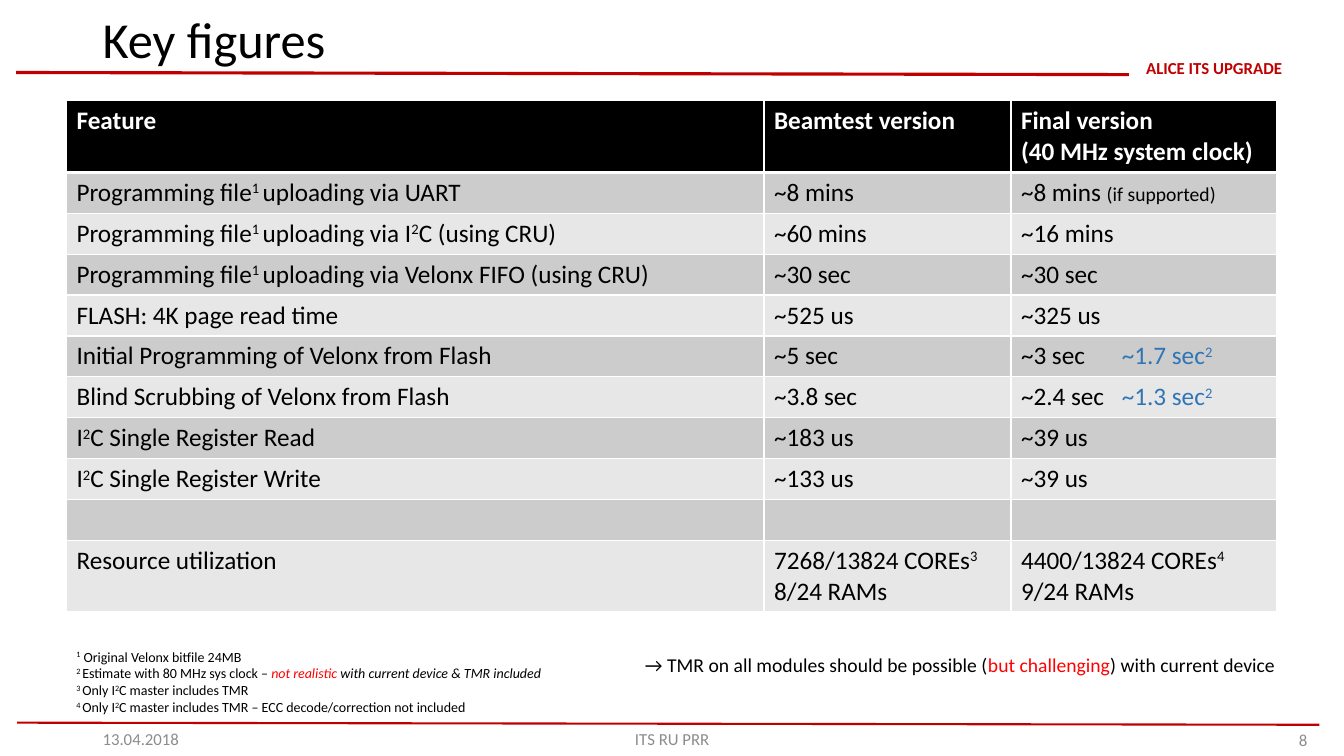
"""Build the key figures slide with its feature table and footnotes."""
from dataclasses import dataclass, field
from typing import Any, NamedTuple

from lxml.etree import SubElement
from pptx import Presentation
from pptx.dml.color import RGBColor
from pptx.enum.shapes import MSO_CONNECTOR as Connector
from pptx.enum.text import MSO_ANCHOR as Anchor, MSO_AUTO_SIZE as AutoSize, PP_ALIGN as Align
from pptx.oxml.ns import qn
from pptx.util import Pt

BLACK = RGBColor(0x00, 0x00, 0x00)
WHITE = RGBColor(0xFF, 0xFF, 0xFF)
DARK_RED = RGBColor(0xC0, 0x00, 0x00)
RED = RGBColor(0xFF, 0x00, 0x00)
BLUE = RGBColor(0x2E, 0x75, 0xB6)
FOOTER_GRAY = RGBColor(0x8C, 0x8C, 0x8C)
BAND_COLORS = (RGBColor(0xE7, 0xE7, 0xE7), RGBColor(0xCC, 0xCC, 0xCC))

COLUMN_WIDTHS = (498.2, 176.4, 190.1)
TALL_ROW, ROW = 50.4, 29.2
TABLE_LEFT, TABLE_TOP = 47.5, 72


class Piece(NamedTuple):
    text: str
    style: dict[str, Any] = {}


class Rule(NamedTuple):
    start: tuple[float, float]
    end: tuple[float, float]
    width: float


Line = str | list[Piece]


@dataclass
class TextBox:
    frame: tuple[float, float, float, float]
    lines: list[Line]
    size: float
    color: RGBColor = BLACK
    align: Align = Align.LEFT
    wrap: bool = True
    anchor: Anchor = Anchor.TOP
    bold: bool = False
    margins: dict[str, Any] = field(default_factory=dict)


RULES = (
    Rule((11.5, 51.8), (806.4, 53.3), 2.25),
    Rule((942.5, 517.7), (12.2, 516.2), 1.5),
)

NO_MARGINS = {f"margin_{side}": Pt(0) for side in ("left", "top", "right", "bottom")}
FOOTER = {"size": 12, "color": FOOTER_GRAY, "anchor": Anchor.MIDDLE}

TEXT_BOXES = (
    TextBox((815.8, 41.8, 103, 13.7), ["ALICE ITS UPGRADE"], 12, DARK_RED, Align.CENTER,
            anchor=Anchor.MIDDLE, bold=True, margins=NO_MARGINS),
    TextBox((66.2, 517.7, 216, 20.2), ["13.04.2018"], **FOOTER),
    TextBox((318.2, 517.7, 324, 20.2), ["ITS RU PRR"], align=Align.CENTER, **FOOTER),
    TextBox((831.6, 518.4, 109.4, 20.2), ["8"], align=Align.RIGHT, **FOOTER),
    TextBox((47.5, 459.4, 355, 55.4), [
        "^1^ Original Velonx bitfile 24MB",
        [Piece("^2 ^Estimate with 80 MHz sys clock – "),
         Piece("not realistic ", {"italic": True, "color": RED}),
         Piece("with current device & TMR included", {"italic": True})],
        "^3 ^Only I^2^C master includes TMR",
        "^4 ^Only I^2^C master includes TMR – ECC decode/correction not included",
    ], 10, wrap=False),
    TextBox((453.6, 463, 469.4, 24.5), [
        [Piece("→ TMR on all modules should be possible ("),
         Piece("but challenging", {"color": RED}),
         Piece(") with current device")],
    ], 14, wrap=False),
)

TABLE_ROWS: list[tuple[list[Line], list[Line], list[Line]]] = [
    (["Feature"], ["Beamtest version"], ["Final version", "(40 MHz system clock)"]),
    (["Programming file^1 ^uploading via UART"], ["~8 mins"],
     [[Piece("~8 mins "), Piece("(if supported)", {"size": Pt(14)})]]),
    (["Programming file^1 ^uploading via I^2^C (using CRU)"], ["~60 mins"], ["~16 mins"]),
    (["Programming file^1 ^uploading via Velonx FIFO (using CRU)"], ["~30 sec"], ["~30 sec"]),
    (["FLASH: 4K page read time"], ["~525 us"], ["~325 us"]),
    (["Initial Programming of Velonx from Flash"], ["~5 sec"],
     [[Piece("~3 sec\t"), Piece("~1.7 sec^2^", {"color": BLUE})]]),
    (["Blind Scrubbing of Velonx from Flash"], ["~3.8 sec"],
     [[Piece("~2.4 sec\t"), Piece("~1.3 sec^2^", {"color": BLUE})]]),
    (["I^2^C Single Register Read"], ["~183 us"], ["~39 us"]),
    (["I^2^C Single Register Write"], ["~133 us"], ["~39 us"]),
    ([], [], []),
    (["Resource utilization"], ["7268/13824 COREs^3^", "8/24 RAMs"],
     ["4400/13824 COREs^4^", "9/24 RAMs"]),
]


def apply(target: Any, values: dict[str, Any]) -> None:
    """Set each named attribute on the target."""
    for name, value in values.items():
        setattr(target, name, value)


def write_lines(text_frame: Any, lines: list[Line], style: dict[str, Any],
                align: Align = Align.LEFT) -> None:
    """Write one paragraph per line; text between carets is superscript."""
    for index, line in enumerate(lines):
        paragraph = text_frame.add_paragraph() if index else text_frame.paragraphs[0]
        paragraph.alignment = align
        for piece in [Piece(line)] if isinstance(line, str) else line:
            for part, text in enumerate(piece.text.split("^")):
                if not text:
                    continue
                run = paragraph.add_run()
                run.text = text
                values = {"name": "Calibri", **style, **piece.style}
                run.font.color.rgb = values.pop("color")
                apply(run.font, values)
                if part % 2:
                    run._r.get_or_add_rPr().set("baseline", "30000")


def add_rule(slide: Any, rule: Rule) -> None:
    """Draw one red rule."""
    connector = slide.shapes.add_connector(
        Connector.STRAIGHT, *(Pt(value) for value in rule.start + rule.end))
    connector.line.color.rgb = DARK_RED
    connector.line.width = Pt(rule.width)
    SubElement(connector._element.spPr, qn("a:effectLst"))


def add_text_box(slide: Any, box: TextBox) -> None:
    """Draw one text box."""
    shape = slide.shapes.add_textbox(*(Pt(value) for value in box.frame))
    apply(shape.text_frame, {
        "word_wrap": box.wrap,
        "vertical_anchor": box.anchor,
        "auto_size": AutoSize.NONE if box.wrap else AutoSize.SHAPE_TO_FIT_TEXT,
        **box.margins,
    })
    style = {"size": Pt(box.size), "color": box.color, "bold": box.bold}
    write_lines(shape.text_frame, box.lines, style, box.align)


def add_borders(cell: Any, widths: dict[str, float]) -> None:
    """Give a cell white borders of the given widths."""
    properties = cell._tc.get_or_add_tcPr()
    for side, width in widths.items():
        border = SubElement(properties, qn(f"a:ln{side}"), w=str(Pt(width)))
        SubElement(SubElement(border, qn("a:solidFill")), qn("a:srgbClr"), val=str(WHITE))


def add_feature_table(slide: Any) -> None:
    """Draw the banded feature table."""
    last = len(TABLE_ROWS) - 1
    heights = [TALL_ROW if index in (0, last) else ROW for index in range(last + 1)]
    table = slide.shapes.add_table(
        len(TABLE_ROWS), len(COLUMN_WIDTHS), Pt(TABLE_LEFT), Pt(TABLE_TOP),
        Pt(sum(COLUMN_WIDTHS)), Pt(sum(heights))).table
    for column, width in zip(table.columns, COLUMN_WIDTHS):
        column.width = Pt(width)
    for index, (row, contents) in enumerate(zip(table.rows, TABLE_ROWS)):
        row.height = Pt(heights[index])
        header = index == 0
        style = {"size": Pt(18), "color": WHITE if header else BLACK, "bold": header}
        for cell, lines in zip(row.cells, contents):
            add_borders(cell, {"L": 1, "R": 1, "T": 3 if index == 1 else 1,
                               "B": 3 if header else 1})
            cell.fill.solid()
            cell.fill.fore_color.rgb = BLACK if header else BAND_COLORS[index % 2]
            write_lines(cell.text_frame, lines, style)


def add_title(slide: Any) -> None:
    """Place and format the title."""
    title = slide.shapes.title
    apply(title, {"left": Pt(66.2), "top": Pt(4.3), "width": Pt(740.2), "height": Pt(51.8)})
    apply(title.text_frame, {"vertical_anchor": Anchor.MIDDLE, "word_wrap": True,
                             "auto_size": AutoSize.NONE})
    write_lines(title.text_frame, ["Key figures"], {"size": Pt(36), "color": BLACK})
    title.text_frame.paragraphs[0].line_spacing = 0.9


def main() -> None:
    """Build and save the presentation."""
    presentation = Presentation()
    apply(presentation, {"slide_width": Pt(960), "slide_height": Pt(540)})
    slide = presentation.slides.add_slide(presentation.slide_layouts.get_by_name("Title Only"))
    for rule in RULES:
        add_rule(slide, rule)
    add_title(slide)
    add_feature_table(slide)
    for box in TEXT_BOXES:
        add_text_box(slide, box)
    presentation.save("out.pptx")


if __name__ == "__main__":
    main()
